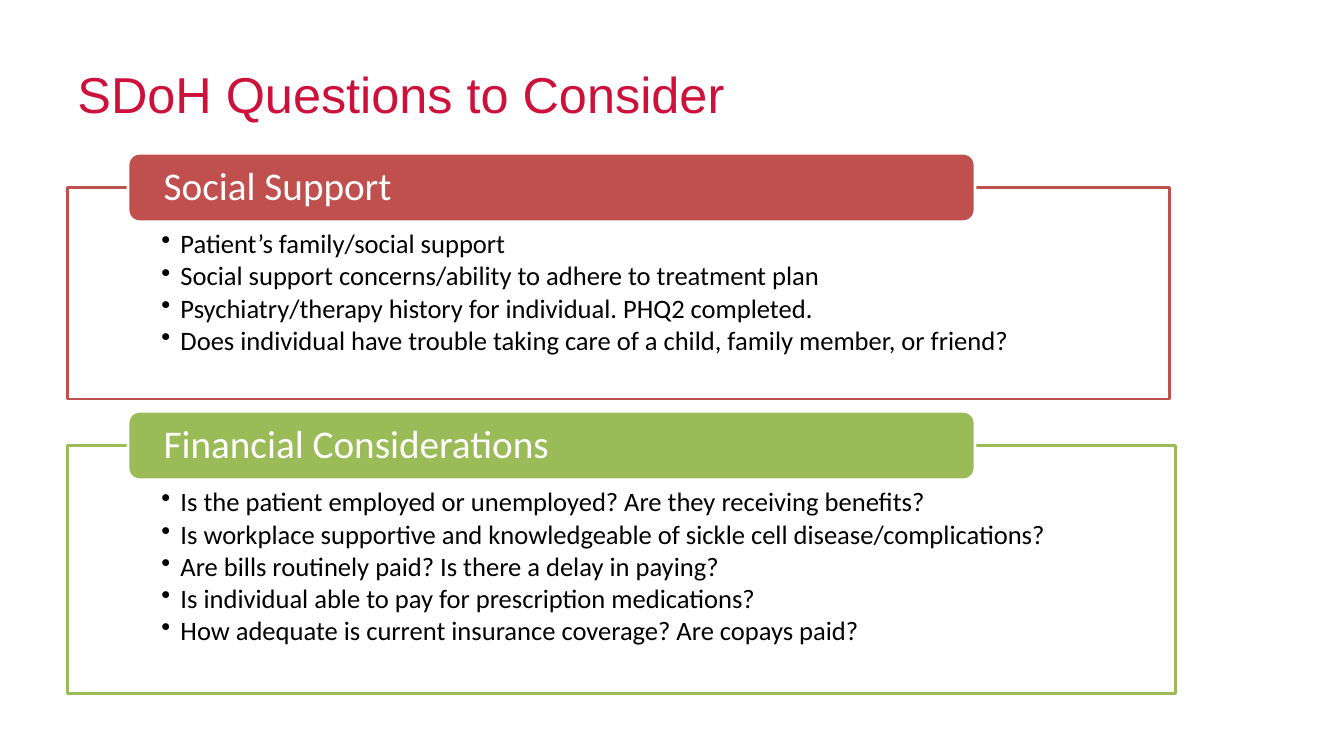
from dataclasses import dataclass

import pptx
import pptx.dml.color
import pptx.enum.shapes
import pptx.enum.text
import pptx.oxml.ns
import pptx.shapes.autoshape
import pptx.slide
import pptx.text.text
import pptx.util
from lxml import etree

Inches = pptx.util.Inches
Pt = pptx.util.Pt
RGBColor = pptx.dml.color.RGBColor
MSO_SHAPE = pptx.enum.shapes.MSO_SHAPE
MSO_ANCHOR = pptx.enum.text.MSO_ANCHOR
PP_ALIGN = pptx.enum.text.PP_ALIGN
qn = pptx.oxml.ns.qn

CRIMSON = RGBColor(0xCD, 0x11, 0x3B)
RED = RGBColor(0xC0, 0x50, 0x4D)
GREEN = RGBColor(0x9B, 0xBB, 0x59)
WHITE = RGBColor(0xFF, 0xFF, 0xFF)
BLACK = RGBColor(0x00, 0x00, 0x00)

LEFT = 0.67
HEADING_RISE = 0.34


@dataclass(frozen=True)
class Topic:
    heading: str
    color: RGBColor
    top: float
    width: float
    height: float
    questions: tuple[str, ...]


TOPICS = (
    Topic("Social Support", RED, 1.86, 10.93, 2.1, (
        "Patient’s family/social support",
        "Social support concerns/ability to adhere to treatment plan",
        "Psychiatry/therapy history for individual. PHQ2 completed.",
        "Does individual have trouble taking care of a child, family member, or friend?",
    )),
    Topic("Financial Considerations", GREEN, 4.42, 10.99, 2.46, (
        "Is the patient employed or unemployed? Are they receiving benefits?",
        "Is workplace supportive and knowledgeable of sickle cell disease/complications?",
        "Are bills routinely paid? Is there a delay in paying?",
        "Is individual able to pay for prescription medications?",
        "How adequate is current insurance coverage? Are copays paid?",
    )),
)


def set_insets(frame: pptx.text.text.TextFrame, side: float, top: float, bottom: float) -> None:
    frame.word_wrap = True
    frame.margin_left = frame.margin_right = Inches(side)
    frame.margin_top = Inches(top)
    frame.margin_bottom = Inches(bottom)


def style_paragraph(paragraph: pptx.text.text._Paragraph, font: str, size: float,
                    color: RGBColor) -> None:
    paragraph.alignment = PP_ALIGN.LEFT
    paragraph.font.name = font
    paragraph.font.size = Pt(size)
    paragraph.font.color.rgb = color


def add_bullet(paragraph: pptx.text.text._Paragraph) -> None:
    properties = paragraph._p.get_or_add_pPr()
    properties.set("marL", str(Inches(0.19)))
    properties.set("indent", str(-Inches(0.19)))
    etree.SubElement(properties, qn("a:buChar"), char="•")


def add_panel(slide: pptx.slide.Slide, kind: MSO_SHAPE, left: float, top: float, width: float,
              height: float, fill: RGBColor, line: RGBColor) -> pptx.shapes.autoshape.Shape:
    panel = slide.shapes.add_shape(kind, Inches(left), Inches(top), Inches(width), Inches(height))
    panel.shadow.inherit = False
    panel.fill.solid()
    panel.fill.fore_color.rgb = fill
    panel.line.color.rgb = line
    panel.line.width = Pt(2)
    return panel


def add_title(slide: pptx.slide.Slide, text: str) -> None:
    title = slide.shapes.add_textbox(Inches(LEFT), Inches(0.54), Inches(12), Inches(0.78))
    frame = title.text_frame
    set_insets(frame, 0.1, 0.05, 0.05)
    frame.vertical_anchor = MSO_ANCHOR.MIDDLE
    frame.text = text
    style_paragraph(frame.paragraphs[0], "Arial", 36, CRIMSON)


def add_topic(slide: pptx.slide.Slide, topic: Topic) -> None:
    body = add_panel(slide, MSO_SHAPE.RECTANGLE, LEFT, topic.top, topic.width, topic.height,
                     WHITE, topic.color)
    fill_color = body.fill._xPr.find(qn("a:solidFill")).find(qn("a:srgbClr"))
    etree.SubElement(fill_color, qn("a:alpha"), val="90000")
    frame = body.text_frame
    set_insets(frame, 0.93, 0.43, 0.15)
    frame.vertical_anchor = MSO_ANCHOR.TOP
    frame.text = "\n".join(topic.questions)
    for paragraph in frame.paragraphs:
        add_bullet(paragraph)
        paragraph.line_spacing = 0.9
        paragraph.space_after = Pt(2.5)
        style_paragraph(paragraph, "Calibri", 19, BLACK)

    heading = add_panel(slide, MSO_SHAPE.ROUNDED_RECTANGLE, 1.27, topic.top - HEADING_RISE,
                        8.4, 2 * HEADING_RISE, topic.color, WHITE)
    frame = heading.text_frame
    set_insets(frame, 0.32, 0, 0)
    frame.vertical_anchor = MSO_ANCHOR.MIDDLE
    frame.text = topic.heading
    frame.paragraphs[0].line_spacing = 0.9
    style_paragraph(frame.paragraphs[0], "Calibri", 28, WHITE)


def main() -> None:
    presentation = pptx.Presentation()
    presentation.slide_width = Inches(13.33)
    presentation.slide_height = Inches(7.5)
    slide = presentation.slides.add_slide(presentation.slide_layouts[6])
    add_title(slide, "SDoH Questions to Consider")
    for topic in TOPICS:
        add_topic(slide, topic)
    presentation.save("out.pptx")


if __name__ == "__main__":
    main()
